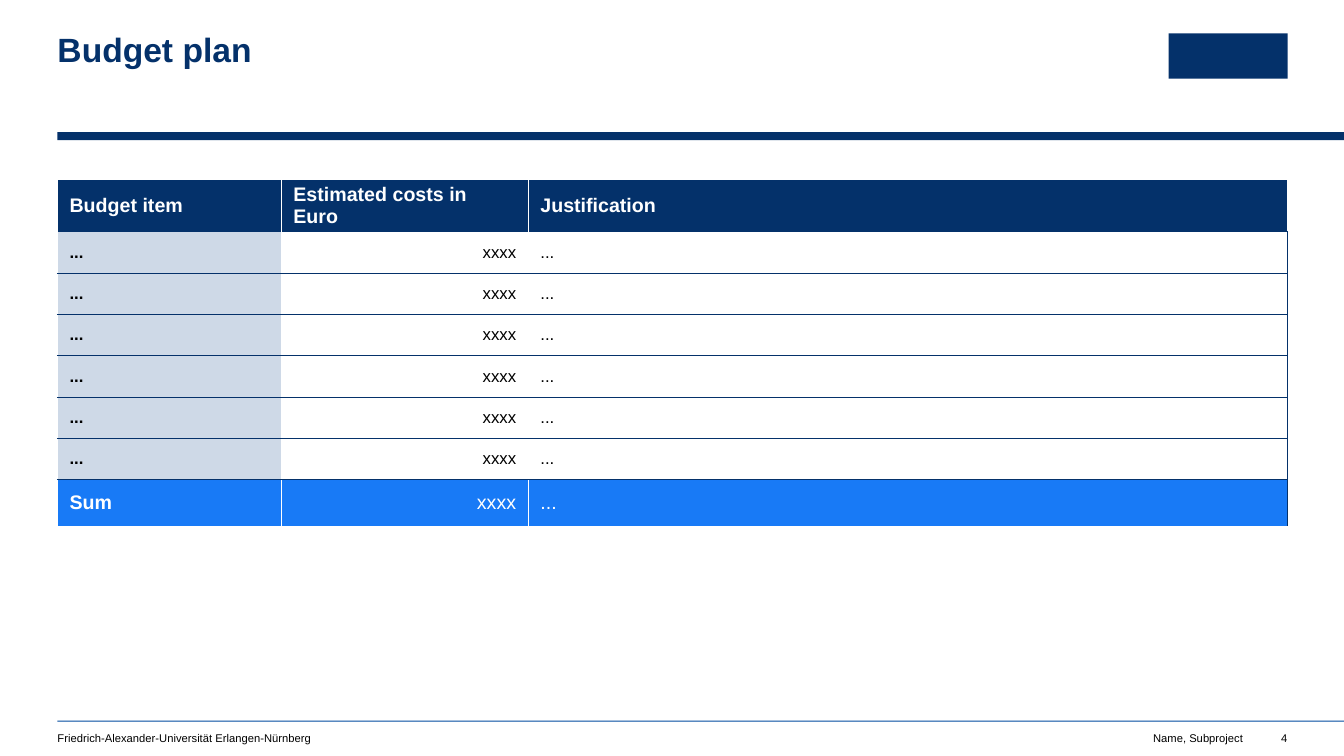
"""Build the budget plan slide with its cost table."""
from pptx import Presentation
from pptx import util as u
from pptx.dml.color import RGBColor
from pptx.enum import shapes, text
from pptx.oxml import parse_xml
from pptx.oxml.ns import nsdecls

NAVY, WHITE, BLACK = "04316A", "FFFFFF", "000000"
PALE, BLUE = "CED9E7", "187AF6"
LEFT, RIGHT = text.PP_ALIGN.LEFT, text.PP_ALIGN.RIGHT


def rgb(value):
    return RGBColor.from_string(value)


def write(tf, words, size, color, bold=False, align=LEFT):
    p = tf.paragraphs[0]
    p.alignment = align
    r = p.add_run()
    r.text = words
    r.font.name, r.font.size, r.font.bold = "Arial", u.Pt(size), bold
    r.font.color.rgb = rgb(color)
    return p


prs = Presentation()
prs.slide_width, prs.slide_height = u.Inches(13.33), u.Inches(7.5)
s = prs.slides.add_slide(prs.slide_layouts[5])

bars = [
    (0.57, 1.31, 12.77, 0.08, NAVY),
    (0.57, 7.15, 12.77, 0.01, "004A9F"),
    (11.59, 0.33, 1.18, 0.45, NAVY),
]
for *box, color in bars:
    sp = s.shapes.add_shape(shapes.MSO_SHAPE.RECTANGLE, *map(u.Inches, box))
    sp.shadow.inherit = False
    sp.fill.solid()
    sp.fill.fore_color.rgb = rgb(color)
    sp.line.fill.background()

title = s.shapes.title
title.left, title.top = u.Inches(0.57), u.Inches(0.33)
title.width, title.height = u.Inches(7.49), u.Inches(0.36)
footers = [
    (0.57, 5.98, "Friedrich-Alexander-Universität Erlangen-Nürnberg", LEFT),
    (10.75, 1.58, "Name, Subproject", RIGHT),
    (12.56, 0.21, "4", RIGHT),
]
labels = [(title, "Budget plan", 24, NAVY, True, LEFT)]
for left, width, words, align in footers:
    sp = s.shapes.add_textbox(u.Inches(left), u.Inches(7.26), u.Inches(width), u.Inches(0.13))
    labels.append((sp, words, 8, BLACK, False, align))
for sp, *style in labels:
    tf = sp.text_frame
    tf.margin_left = tf.margin_right = tf.margin_top = tf.margin_bottom = 0
    tf.vertical_anchor = text.MSO_ANCHOR.TOP
    tf.auto_size = text.MSO_AUTO_SIZE.NONE
    tf.word_wrap = True
    write(tf, *style)
title.text_frame.paragraphs[0].line_spacing = 0.9

rows = [
    ("Budget item", "Estimated costs in Euro", "Justification"),
    *[("...", "xxxx", "...")] * 6,
    ("Sum", "xxxx", "..."),
]
last_row, last_col = len(rows) - 1, 2
table = s.shapes.add_table(
    len(rows), 3, u.Inches(0.57), u.Inches(1.78), u.Inches(12.2), u.Inches(3.41)
).table
table.first_row = table.horz_banding = False
for col, width in zip(table.columns, (2.22, 2.45, 7.53)):
    col.width = u.Inches(width)

for i, row in enumerate(rows):
    header, total = i == 0, i == last_row
    table.rows[i].height = u.Inches(0.47 if header or total else 0.41)
    for j, words in enumerate(row):
        cell = table.cell(i, j)
        cell.vertical_anchor = text.MSO_ANCHOR.MIDDLE
        cell.margin_left = cell.margin_right = u.Inches(0.12)
        cell.margin_top = cell.margin_bottom = u.Inches(0.04)

        side = (WHITE, 0.5 if header else 1)
        thin = (NAVY, 0.25)
        borders = {
            "L": side,
            "R": thin if j == last_col and not header else side,
            "T": (WHITE, 1) if header else thin,
            "B": (WHITE, 1) if total else thin,
        }
        for edge, (color, width) in borders.items():
            cell._tc.get_or_add_tcPr().append(parse_xml(
                f'<a:ln{edge} {nsdecls("a")} w="{u.Pt(width)}"><a:solidFill>'
                f'<a:srgbClr val="{color}"/></a:solidFill></a:ln{edge}>'
            ))

        fill = NAVY if header else BLUE if total else PALE if j == 0 else None
        if fill:
            cell.fill.solid()
            cell.fill.fore_color.rgb = rgb(fill)
        else:
            cell.fill.background()
        strong = header or total
        write(
            cell.text_frame, words, 14 if strong else 12, WHITE if strong else BLACK,
            header or j == 0, RIGHT if j == 1 and not header else LEFT,
        )

prs.save("out.pptx")
